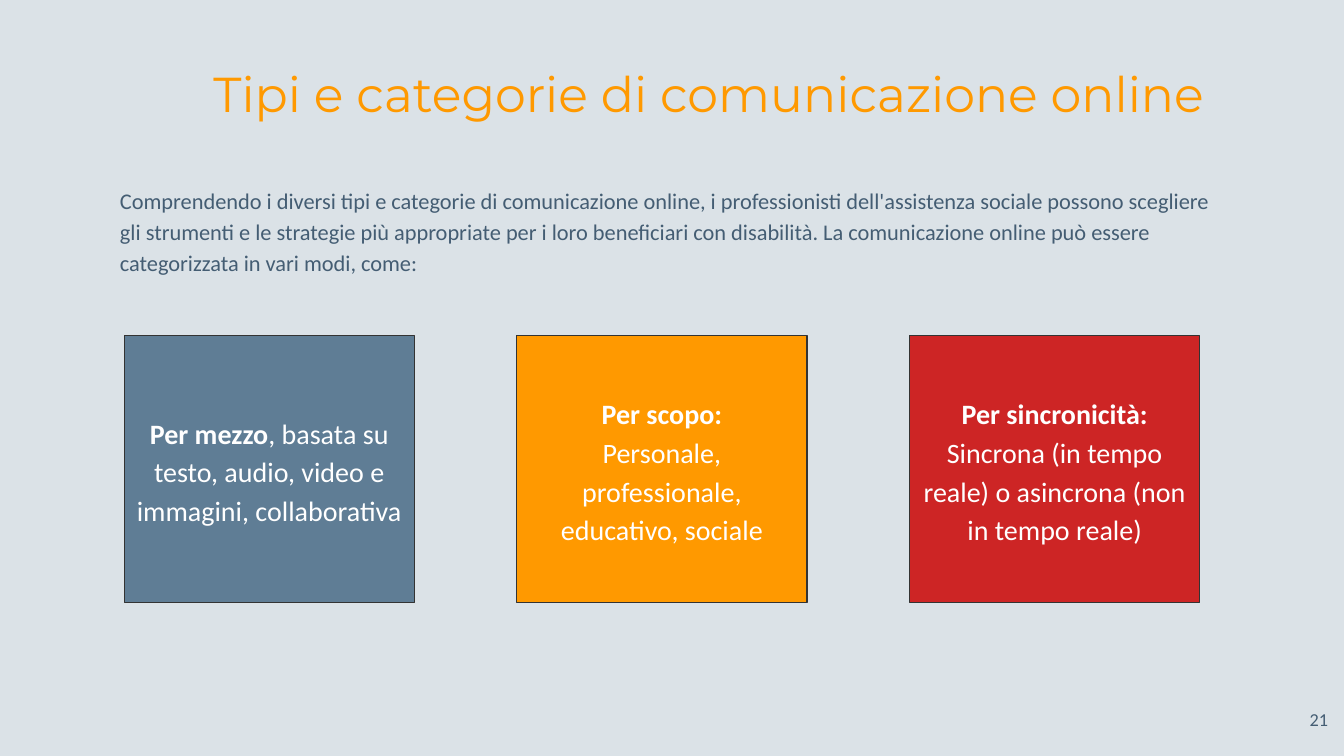
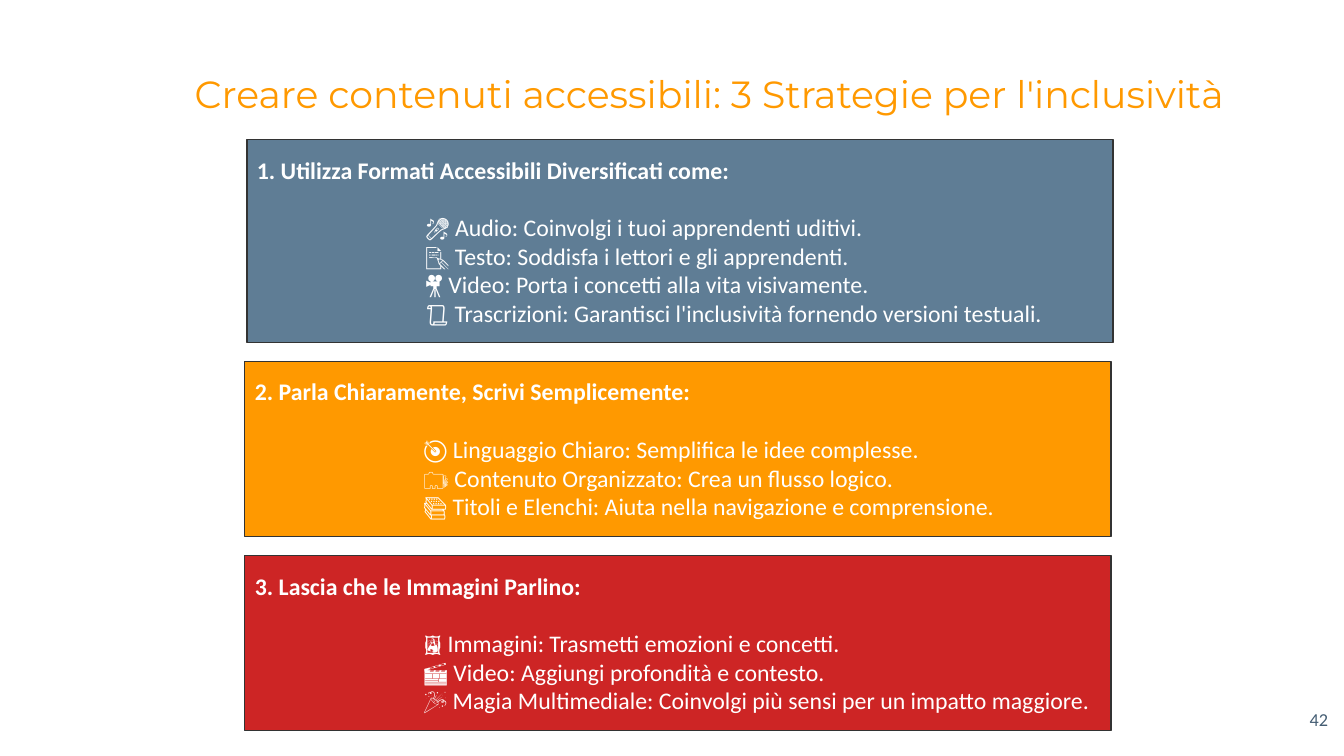
import pptx
import pptx.dml.color
import pptx.enum.shapes
import pptx.enum.text
import pptx.util

ALIGN = pptx.enum.text.PP_ALIGN
ANCHOR = pptx.enum.text.MSO_ANCHOR
BLUE, ORANGE, RED = "5F7D95", "FF9900", "CD2525"
INK, WHITE, EDGE, PALE = "445D73", "FFFFFF", "333333", "DBE2E7"


def rgb(value):
    """Turn a hex string into a colour."""
    return pptx.dml.color.RGBColor.from_string(value)


def apply(target, values):
    """Set each attribute named in a dict of format values."""
    for name, value in values.items():
        setattr(target, name, value)


class Deck:
    """Hold the style and the current slide, measured in hundredths of its size."""

    def __init__(self):
        """Start a widescreen presentation."""
        self.prs = pptx.Presentation()
        self.prs.slide_width = pptx.util.Inches(13.33)
        self.prs.slide_height = pptx.util.Inches(7.5)

    def place(self, x, y, w, h):
        """Turn shares of the slide into left, top, width and height."""
        width, height = self.prs.slide_width, self.prs.slide_height
        return [int(share * size / 100) for share, size in
                zip((x, y, w, h), (width, height, width, height))]

    def frame(self, sp, inset, anchor):
        """Prepare the text frame of a shape."""
        tf = sp.text_frame
        margin = pptx.util.Inches(inset)
        apply(tf, dict(word_wrap=True, auto_size=pptx.enum.text.MSO_AUTO_SIZE.NONE,
                       vertical_anchor=anchor, margin_left=margin, margin_top=margin,
                       margin_right=margin, margin_bottom=margin))
        return tf

    def run(self, p, text, size, color, bold=False, name="Calibri"):
        """Add a formatted run to a paragraph."""
        r = p.add_run()
        r.text = text
        apply(r.font, dict(size=pptx.util.Pt(size), bold=bold, name=name))
        r.font.color.rgb = rgb(color)

    def slide(self, title, size, number, background):
        """Add a slide with its background, title and page number."""
        self.s = self.prs.slides.add_slide(self.prs.slide_layouts[5])
        self.s.background.fill.solid()
        self.s.background.fill.fore_color.rgb = rgb(background)
        sp = self.s.shapes.title
        apply(sp, dict(zip(("left", "top", "width", "height"),
                           self.place(12.75, 6.8, 80, 11))))
        p = self.frame(sp, 0.14, ANCHOR.MIDDLE).paragraphs[0]
        p.alignment = ALIGN.CENTER
        self.run(p, title, size, ORANGE, name="Montserrat")
        self.text(number, (93.55, 92.4, 6, 7.6), 13, 0.1, alignment=ALIGN.RIGHT)

    def text(self, text, area, size, inset, **style):
        """Add a text box with one paragraph."""
        sp = self.s.shapes.add_textbox(*self.place(*area))
        p = self.frame(sp, inset, ANCHOR.TOP).paragraphs[0]
        apply(p, style)
        self.run(p, text, size, INK)

    def box(self, color, area):
        """Add an outlined rectangle and return its text frame."""
        sp = self.s.shapes.add_shape(pptx.enum.shapes.MSO_SHAPE.RECTANGLE, *self.place(*area))
        sp.shadow.inherit = False
        sp.fill.solid()
        sp.fill.fore_color.rgb = rgb(color)
        sp.line.color.rgb = rgb(EDGE)
        sp.line.width = pptx.util.Pt(0.75)
        return self.frame(sp, 0.1, ANCHOR.MIDDLE)

    def card(self, color, area, lead, rest, split=False):
        """Add a centred card that opens with bold words."""
        p = self.box(color, area).paragraphs[0]
        apply(p, dict(alignment=ALIGN.CENTER, line_spacing=1.15,
                      space_after=pptx.util.Pt(15)))
        self.run(p, lead, 20, WHITE, True)
        if split:
            p.add_line_break()
        self.run(p, rest, 20, WHITE)

    def panel(self, color, area, heading, items):
        """Add a panel with a bold heading and indented lines."""
        tf = self.box(color, area)
        p = tf.paragraphs[0]
        p.alignment = ALIGN.LEFT
        self.run(p, heading, 17, WHITE, True)
        for i, item in enumerate(items):
            p = tf.add_paragraph()
            apply(p, dict(alignment=ALIGN.LEFT, space_before=pptx.util.Pt(0 if i else 20.7)))
            p._p.get_or_add_pPr().set("marL", str(pptx.util.Inches(1.67)))
            self.run(p, item, 17, WHITE)


def types_slide(deck):
    """Build the slide on types of online communication."""
    deck.slide("Tipi e categorie di comunicazione online", 35, "21", PALE)
    deck.text("Comprendendo i diversi tipi e categorie di comunicazione online, i professionisti "
              "dell'assistenza sociale possono scegliere gli strumenti e le strategie più "
              "appropriate per i loro beneficiari con disabilità. La comunicazione online può "
              "essere categorizzata in vari modi, come:",
              (7.88, 22.4, 84.25, 10.1), 16, 0.14, line_spacing=1.15)
    cards = [
        (BLUE, "Per mezzo", ", basata su testo, audio, video e immagini, collaborativa", False),
        (ORANGE, "Per scopo:", "Personale, professionale, educativo, sociale", True),
        (RED, "Per sincronicità: ", "Sincrona (in tempo reale) o asincrona (non in tempo reale)",
         False),
    ]
    for i, (color, lead, rest, split) in enumerate(cards):
        deck.card(color, (9.23 + 29.22 * i, 44.4, 21.6, 35.3), lead, rest, split)


def strategies_slide(deck):
    """Build the slide on three strategies for inclusion."""
    deck.slide("Creare contenuti accessibili: 3 Strategie per l'inclusività", 27, "42", WHITE)
    panels = [
        (BLUE, 18.38, "1. Utilizza Formati Accessibili Diversificati come:", [
            "🎤 Audio: Coinvolgi i tuoi apprendenti uditivi.",
            "📝 Testo: Soddisfa i lettori e gli apprendenti.",
            "🎥 Video: Porta i concetti alla vita visivamente.",
            "📜 Trascrizioni: Garantisci l'inclusività fornendo versioni testuali."]),
        (ORANGE, 18.23, "2. Parla Chiaramente, Scrivi Semplicemente:", [
            "🎯 Linguaggio Chiaro: Semplifica le idee complesse.",
            "🗂 Contenuto Organizzato: Crea un flusso logico.",
            "📚 Titoli e Elenchi: Aiuta nella navigazione e comprensione."]),
        (RED, 18.23, "3. Lascia che le Immagini Parlino:", [
            "🖼 Immagini: Trasmetti emozioni e concetti.",
            "🎬 Video: Aggiungi profondità e contesto.",
            "🎉 Magia Multimediale: Coinvolgi più sensi per un impatto maggiore."]),
    ]
    top, gap = 18.5, 2.47
    for color, left, heading, items in panels:
        height = 12.4 + 3.6 * len(items)
        deck.panel(color, (left, top, 64.44, height), heading, items)
        top += height + gap


def main():
    """Build and save the presentation."""
    deck = Deck()
    types_slide(deck)
    strategies_slide(deck)
    deck.prs.save("out.pptx")


if __name__ == "__main__":
    main()
